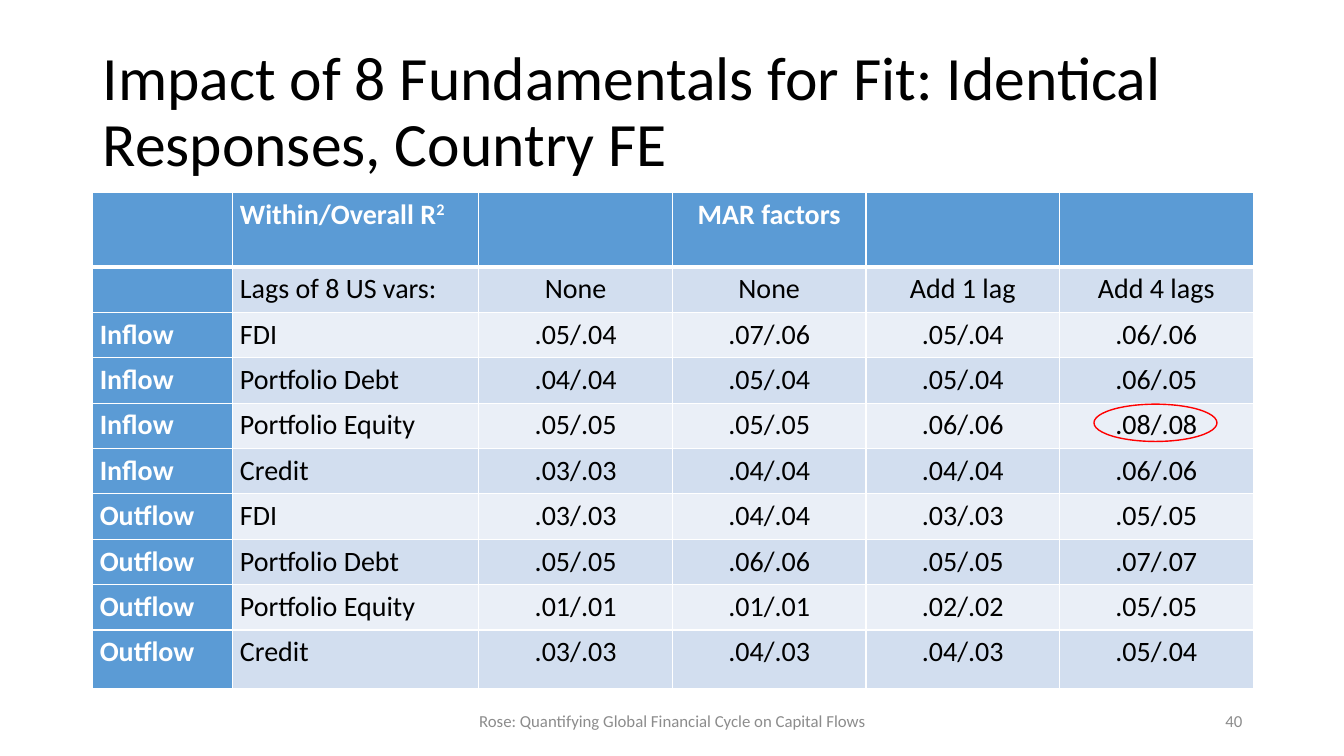
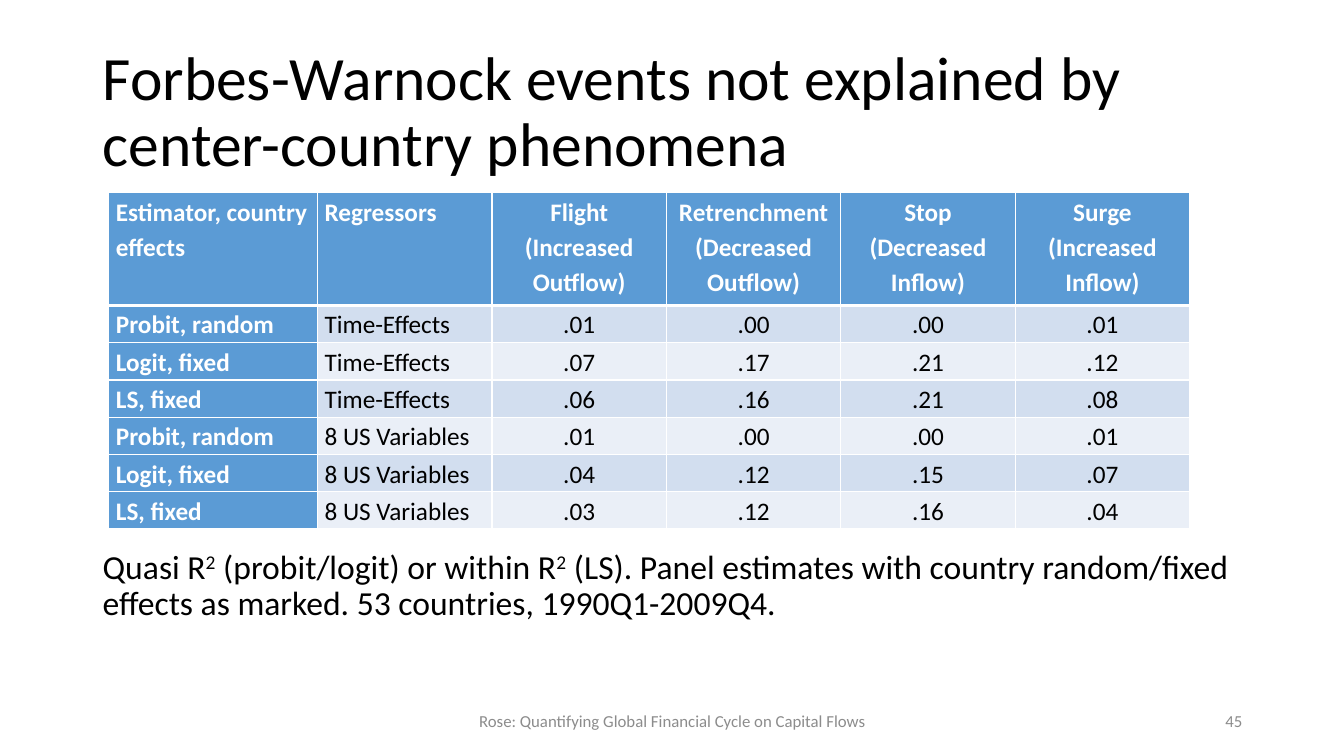
from lxml import etree
from pptx import Presentation
from pptx.dml.color import RGBColor
from pptx.enum.shapes import MSO_SHAPE
from pptx.enum.text import MSO_ANCHOR as ANCHOR, PP_ALIGN as ALIGN
from pptx.oxml.ns import qn
from pptx.util import Pt

PX = 9144
FONT = "Calibri"
BLACK, WHITE, GRAY, RED = "000000", "FFFFFF", "8C8C8C", "FF0000"
BLUE, BANDS = "5B9BD5", ("EAEFF7", "D2DEEF")
FOOTER = "Rose: Quantifying Global Financial Cycle on Capital Flows"

FIT_ROWS = [
    ["", "Within/Overall R^2", "", "MAR factors", "", ""],
    ["", "Lags of 8 US vars:", "None", "None", "Add 1 lag", "Add 4 lags"],
    ["Inflow", "FDI", ".05/.04", ".07/.06", ".05/.04", ".06/.06"],
    ["Inflow", "Portfolio Debt", ".04/.04", ".05/.04", ".05/.04", ".06/.05"],
    ["Inflow", "Portfolio Equity", ".05/.05", ".05/.05", ".06/.06", ".08/.08"],
    ["Inflow", "Credit", ".03/.03", ".04/.04", ".04/.04", ".06/.06"],
    ["Outflow", "FDI", ".03/.03", ".04/.04", ".03/.03", ".05/.05"],
    ["Outflow", "Portfolio Debt", ".05/.05", ".06/.06", ".05/.05", ".07/.07"],
    ["Outflow", "Portfolio Equity", ".01/.01", ".01/.01", ".02/.02", ".05/.05"],
    ["Outflow", "Credit", ".03/.03", ".04/.03", ".04/.03", ".05/.04"],
]
EVENT_ROWS = [
    ["Estimator, country effects", "Regressors", "Flight (Increased Outflow)",
     "Retrenchment (Decreased Outflow)", "Stop (Decreased Inflow)", "Surge (Increased Inflow)"],
    ["Probit, random", "Time-Effects", ".01", ".00", ".00", ".01"],
    ["Logit, fixed", "Time-Effects", ".07", ".17", ".21", ".12"],
    ["LS, fixed", "Time-Effects", ".06", ".16", ".21", ".08"],
    ["Probit, random", "8 US Variables", ".01", ".00", ".00", ".01"],
    ["Logit, fixed", "8 US Variables", ".04", ".12", ".15", ".07"],
    ["LS, fixed", "8 US Variables", ".03", ".12", ".16", ".04"],
]


def px(*lengths):
    return [n * PX for n in lengths]


def rgb(color):
    return RGBColor.from_string(color)


def write(tf, text, size=12, color=BLACK, bold=False, align=ALIGN.LEFT, spacing=1.0):
    p = tf.paragraphs[0]
    p.alignment = align
    p.line_spacing = spacing
    for i, part in enumerate(text.split("^")):
        raised = part[:1] if i else ""
        for piece, is_raised in ((raised, True), (part[len(raised):], False)):
            if piece:
                r = p.add_run()
                r.text = piece
                f = r.font
                f.name, f.size, f.bold = FONT, Pt(size), bold
                f.color.rgb = rgb(color)
                if is_raised:
                    r._r.get_or_add_rPr().set("baseline", "30000")


def text_box(s, box, text, anchor=ANCHOR.MIDDLE, **fmt):
    tf = s.shapes.add_textbox(*px(*box)).text_frame
    tf.word_wrap = True
    tf.vertical_anchor = anchor
    write(tf, text, **fmt)


def border(cell, side, width):
    ln = etree.SubElement(cell._tc.get_or_add_tcPr(), qn(f"a:ln{side}"), w=str(Pt(width)))
    fill = etree.SubElement(ln, qn("a:solidFill"))
    etree.SubElement(fill, qn("a:srgbClr"), val=WHITE)


def style_cell(cell, text, row, col, size):
    is_label = row == 0 or col == 0
    cell.margin_left, cell.margin_right = px(7, 7)
    cell.margin_top = cell.margin_bottom = 0
    for side in "LRTB":
        under_header = (row, side) in ((0, "B"), (1, "T"))
        border(cell, side, 3 if under_header else 1)
    cell.fill.solid()
    cell.fill.fore_color.rgb = rgb(BLUE if is_label else BANDS[row % 2])
    write(cell.text_frame, text, size=size, bold=is_label, spacing=1.15,
          color=WHITE if is_label else BLACK,
          align=ALIGN.LEFT if col < 2 else ALIGN.CENTER)


def table(s, left, top, widths, heights, rows, size):
    box = px(left, top, sum(widths), sum(heights))
    t = s.shapes.add_table(len(rows), len(widths), *box).table
    for column, width in zip(t.columns, widths):
        column.width = width * PX
    for row, height in zip(t.rows, heights):
        row.height = height * PX
    for i, row in enumerate(rows):
        for j, text in enumerate(row):
            style_cell(t.cell(i, j), text, i, j, size)


def ring(s, box):
    sp = s.shapes.add_shape(MSO_SHAPE.OVAL, *px(*box))
    sp.shadow.inherit = False
    sp.fill.background()
    sp.line.color.rgb = rgb(RED)
    sp.line.width = Pt(1)


def new_slide(prs, title, number):
    s = prs.slides.add_slide(prs.slide_layouts[6])
    text_box(s, (92, 40, 1150, 145), title, size=44, spacing=0.9)
    text_box(s, (442, 695, 450, 40), FOOTER, color=GRAY, align=ALIGN.CENTER)
    text_box(s, (942, 695, 300, 40), str(number), color=GRAY, align=ALIGN.RIGHT)
    return s


def main():
    prs = Presentation()
    prs.slide_width, prs.slide_height = px(1333, 750)

    s = new_slide(prs, "Impact of 8 Fundamentals for Fit: Identical Responses, Country FE", 40)
    table(s, 92, 191, [139, 244] + [192] * 4, [74] + [45] * 8 + [58], FIT_ROWS, 20)
    ring(s, (1085, 401, 122, 37))

    s = new_slide(prs, "Forbes-Warnock events not explained by center-country phenomena", 45)
    text_box(s, (92, 541, 1150, 135),
             "Quasi R^2 (probit/logit) or within R^2 (LS). Panel estimates with country "
             "random/fixed effects as marked. 53 countries, 1990Q1-2009Q4.",
             anchor=ANCHOR.TOP, size=24, spacing=0.9)
    table(s, 108, 191, [207] + [173] * 5, [112] + [37] * 6, EVENT_ROWS, 18)

    prs.save("out.pptx")


if __name__ == "__main__":
    main()
